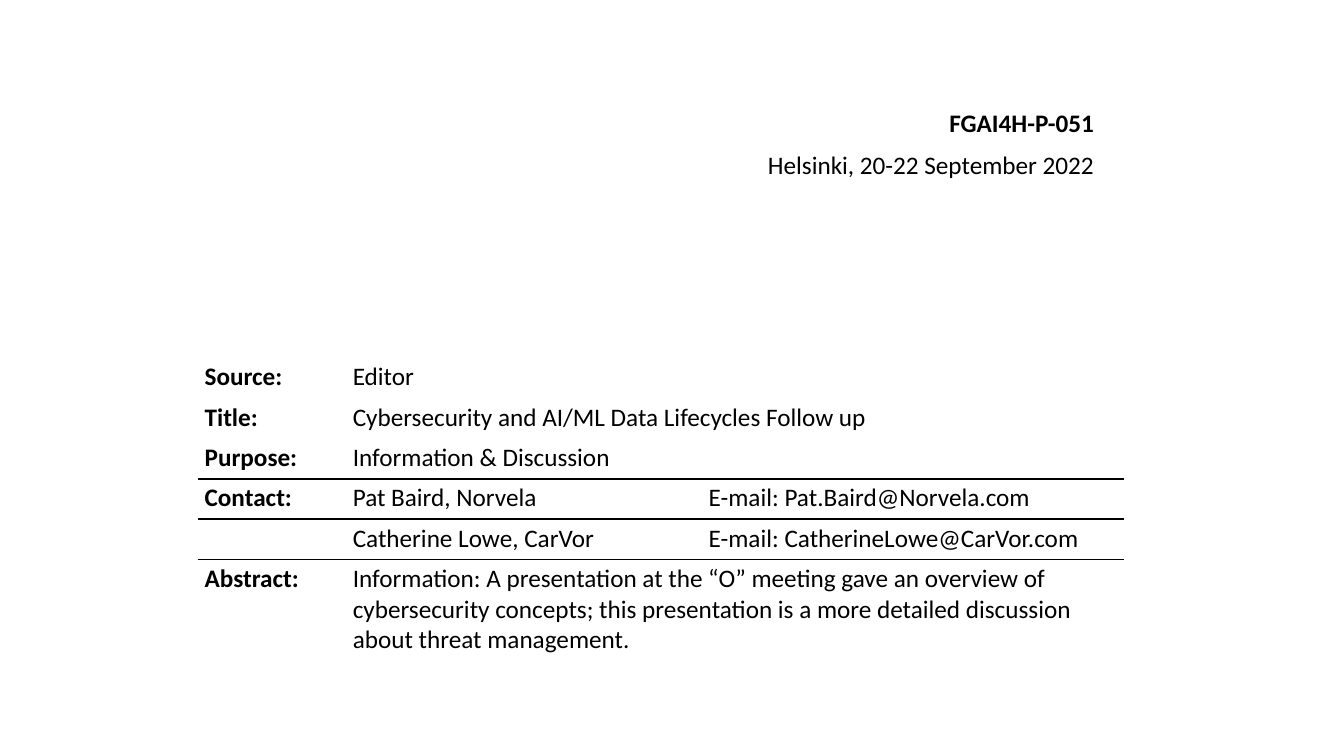
"""Build the cover slide of a meeting document."""
from dataclasses import dataclass

import pptx
import pptx.dml.color
import pptx.enum.text
import pptx.oxml
import pptx.oxml.ns
import pptx.util
from pptx.util import Inches


@dataclass(frozen=True)
class Theme:
    """Hold the colours, type sizes and line widths."""
    font: str = "Calibri"
    size: int = 18
    ink: str = "000000"
    rule_width: float = 1.5


THEME = Theme()
PLAIN_STYLE = "{2D5ABB26-0587-4C30-8999-92F81FD0307C}"
COLUMN_WIDTHS = (1.47, 3.53, 4.19)
ROW_HEIGHTS = (0.4,) * 5 + (0.98,)
RULED_ROWS = (2, 3, 4)
DETAILS = (
    ("Source:", "Editor"),
    ("Title:", "Cybersecurity and AI/ML Data Lifecycles Follow up"),
    ("Purpose:", "Information & Discussion"),
    ("Contact:", "Pat Baird, Norvela", "E-mail: Pat.Baird@Norvela.com"),
    ("", "Catherine Lowe, CarVor", "E-mail: CatherineLowe@CarVor.com"),
    ("Abstract:", "Information: A presentation at the “O” meeting gave an overview of "
     "cybersecurity concepts; this presentation is a more detailed discussion "
     "about threat management."),
)


def write(frame, text, bold=False):
    """Put one styled paragraph in a text frame and return it."""
    paragraph = frame.paragraphs[0]
    paragraph.text = text
    paragraph.font.name = THEME.font
    paragraph.font.size = pptx.util.Pt(THEME.size)
    paragraph.font.bold = bold
    paragraph.font.color.rgb = pptx.dml.color.RGBColor.from_string(THEME.ink)
    return paragraph


def add_heading(page, text, left, top, width, bold=False):
    """Add a right-aligned line of text."""
    box = page.shapes.add_textbox(Inches(left), Inches(top), Inches(width), Inches(0.4))
    box.text_frame.word_wrap = False
    box.text_frame.auto_size = pptx.enum.text.MSO_AUTO_SIZE.SHAPE_TO_FIT_TEXT
    write(box.text_frame, text, bold).alignment = pptx.enum.text.PP_ALIGN.RIGHT


def add_rule(cell, position, side):
    """Draw a border on one side of a cell."""
    width = pptx.util.Pt(THEME.rule_width)
    border = pptx.oxml.parse_xml(
        f'<a:{side} {pptx.oxml.ns.nsdecls("a")} w="{width}"><a:solidFill>'
        f'<a:srgbClr val="{THEME.ink}"/></a:solidFill></a:{side}>')
    cell._tc.get_or_add_tcPr().insert(position, border)


def format_cell(cell, row):
    """Set the margins, fill and ruled sides of a cell."""
    cell.margin_left = cell.margin_right = Inches(0.07)
    cell.margin_top = cell.margin_bottom = Inches(0.04)
    cell.fill.background()
    sides = [side for side, ruled in (("lnT", row - 1), ("lnB", row)) if ruled in RULED_ROWS]
    for position, side in enumerate(sides):
        add_rule(cell, position, side)


def add_details(page):
    """Add the table of document details."""
    frame = page.shapes.add_table(
        len(ROW_HEIGHTS), len(COLUMN_WIDTHS), Inches(1.96), Inches(3.55),
        Inches(sum(COLUMN_WIDTHS)), Inches(sum(ROW_HEIGHTS)))
    table = frame.table
    table.first_row = table.horz_banding = False
    table._tbl.tblPr.find(pptx.oxml.ns.qn("a:tableStyleId")).text = PLAIN_STYLE
    for column, width in zip(table.columns, COLUMN_WIDTHS):
        column.width = Inches(width)
    for row, (height, texts) in enumerate(zip(ROW_HEIGHTS, DETAILS)):
        table.rows[row].height = Inches(height)
        for cell in table.rows[row].cells:
            format_cell(cell, row)
        if len(texts) == 2:
            table.cell(row, 1).merge(table.cell(row, 2))
        for column, text in enumerate(texts):
            write(table.cell(row, column).text_frame, text, bold=column == 0)


def main():
    """Build and save the deck."""
    deck = pptx.Presentation()
    deck.slide_width, deck.slide_height = Inches(13.33), Inches(7.5)
    page = deck.slides.add_slide(deck.slide_layouts.get_by_name("Blank"))
    add_heading(page, "FGAI4H-P-051", 9.29, 1.02, 1.66, bold=True)
    add_heading(page, "Helsinki, 20-22 September 2022", 7.48, 1.43, 3.47)
    add_details(page)
    deck.save("out.pptx")


if __name__ == "__main__":
    main()
